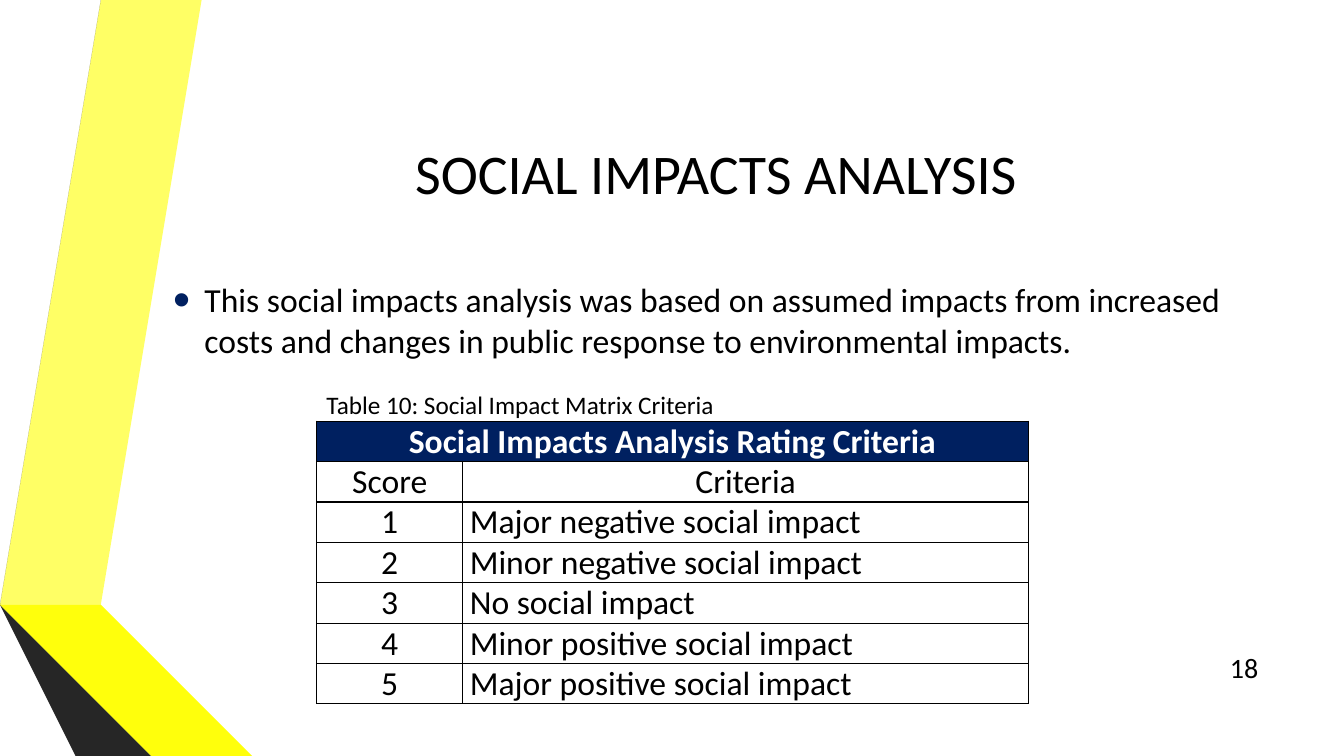
from lxml.etree import SubElement
from pptx import Presentation
from pptx.dml.color import RGBColor
from pptx.enum.text import MSO_ANCHOR, PP_ALIGN
from pptx.oxml.ns import qn
from pptx.util import Inches, Pt

COLORS = {
    "black": "000000", "white": "FFFFFF", "navy": "002060",
    "pale yellow": "FFFF65", "yellow": "FFFF0C", "olive": "B2B200",
    "grey": "595959", "dark grey": "404040", "charcoal": "262626",
}
RIBBONS = [
    ("pale yellow", [(0.5, 5.78), (0.77, 5.83), (1.73, 0), (1.45, 0)]),
    ("grey", [(1.39, 0), (1.11, 0), (0.16, 5.73), (0.44, 5.77)]),
    ("charcoal", [(0.16, 5.73), (1.45, 7.5), (1.51, 7.5)]),
    ("olive", [(0.5, 5.79), (2.08, 7.5), (2.14, 7.5)]),
    ("yellow", [(0.5, 5.79), (2.14, 7.5), (2.83, 7.5), (0.77, 5.83), (0.5, 5.78)]),
    ("dark grey", [(2.02, 7.5), (0.48, 5.83), (0.43, 5.78), (0.44, 5.77),
                   (0.16, 5.73), (1.51, 7.5)]),
]
TITLE = "SOCIAL IMPACTS ANALYSIS"
BODY = ("This social impacts analysis was based on assumed impacts from increased "
        "costs and changes in public response to environmental impacts.")
CAPTION = "Table 10: Social Impact Matrix Criteria"
PAGE_NUMBER = "18"
TABLE_TITLE = "Social Impacts Analysis Rating Criteria"
RATINGS = [
    ("Score", "Criteria"),
    ("1", "Major negative social impact"),
    ("2", "Minor negative social impact"),
    ("3", "No social impact"),
    ("4", "Minor positive social impact"),
    ("5", "Major positive social impact"),
]
COLUMN_WIDTHS = [1.45, 5.61]
ROW_HEIGHT = 0.4


def rgb(name):
    return RGBColor.from_string(COLORS[name])


def set_format(target, values):
    for name, value in values.items():
        setattr(target, name, value)


def write(frame, text, size, color="black", bold=False, align=PP_ALIGN.LEFT):
    para = frame.paragraphs[0]
    para.alignment = align
    span = para.add_run()
    span.text = text
    set_format(span.font, {"name": "Calibri", "size": Pt(size), "bold": bold})
    span.font.color.rgb = rgb(color)
    return para


def add_text(page, place, text, size, align=PP_ALIGN.LEFT, anchor=MSO_ANCHOR.MIDDLE):
    box = page.shapes.add_textbox(*map(Inches, place))
    set_format(box.text_frame, {"word_wrap": True, "vertical_anchor": anchor})
    return write(box.text_frame, text, size, align=align)


def add_bullet(para):
    set_format(para, {"space_before": Pt(4.8), "space_after": Pt(6)})
    properties = para._p.get_or_add_pPr()
    properties.set("marL", str(Inches(0.31)))
    properties.set("indent", str(-Inches(0.31)))
    color = SubElement(properties, qn("a:buClr"))
    SubElement(color, qn("a:srgbClr"), val=COLORS["navy"])
    SubElement(properties, qn("a:buSzPct"), val="145000")
    SubElement(properties, qn("a:buFont"), typeface="Arial")
    SubElement(properties, qn("a:buChar"), char="•")


def add_borders(cell):
    properties = cell._tc.get_or_add_tcPr()
    for index, side in enumerate(("lnL", "lnR", "lnT", "lnB")):
        line = properties.makeelement(qn(f"a:{side}"), {"w": str(Pt(1))})
        properties.insert(index, line)
        fill = SubElement(line, qn("a:solidFill"))
        SubElement(fill, qn("a:srgbClr"), val=COLORS["black"])


def add_ribbon(page, color, points):
    builder = page.shapes.build_freeform(*points[0], scale=Inches(1))
    builder.add_line_segments(points[1:], close=True)
    ribbon = builder.convert_to_shape()
    ribbon.shadow.inherit = False
    ribbon.fill.solid()
    ribbon.fill.fore_color.rgb = rgb(color)
    ribbon.line.fill.background()


def add_ratings(page):
    rows = [(TABLE_TITLE, "")] + RATINGS
    place = (3.14, 4.18, sum(COLUMN_WIDTHS), ROW_HEIGHT * len(rows))
    table = page.shapes.add_table(len(rows), 2, *map(Inches, place)).table
    set_format(table, {"first_row": False, "horz_banding": False})
    for column, width in zip(table.columns, COLUMN_WIDTHS):
        column.width = Inches(width)
    table.cell(0, 0).merge(table.cell(0, 1))
    for row_index, row in enumerate(rows):
        heading = row_index == 0
        for column_index, text in enumerate(row):
            cell = table.cell(row_index, column_index)
            set_format(cell, {"margin_left": Inches(0.07), "margin_right": Inches(0.07),
                              "margin_top": 0, "margin_bottom": 0})
            if heading:
                cell.fill.solid()
                cell.fill.fore_color.rgb = rgb("navy")
            else:
                cell.fill.background()
            add_borders(cell)
            if text:
                centred = row_index < 2 or column_index == 0
                write(cell.text_frame, text, 24, "white" if heading else "black",
                      heading, PP_ALIGN.CENTER if centred else PP_ALIGN.LEFT)


def main():
    deck = Presentation()
    set_format(deck, {"slide_width": Inches(13.33), "slide_height": Inches(7.5)})
    page = deck.slides.add_slide(deck.slide_layouts[6])
    for color, points in RIBBONS:
        add_ribbon(page, color, points)
    add_text(page, (1.62, 0.75, 10.96, 1.92), TITLE, 40, PP_ALIGN.CENTER)
    add_bullet(add_text(page, (1.62, 1.46, 10.96, 3.42), BODY, 24))
    add_text(page, (11.98, 6.42, 0.6, 0.4), PAGE_NUMBER, 20, PP_ALIGN.RIGHT)
    add_ratings(page)
    add_text(page, (3.14, 3.81, 5.06, 0.4), CAPTION, 18, anchor=MSO_ANCHOR.TOP)
    deck.save("out.pptx")


if __name__ == "__main__":
    main()
